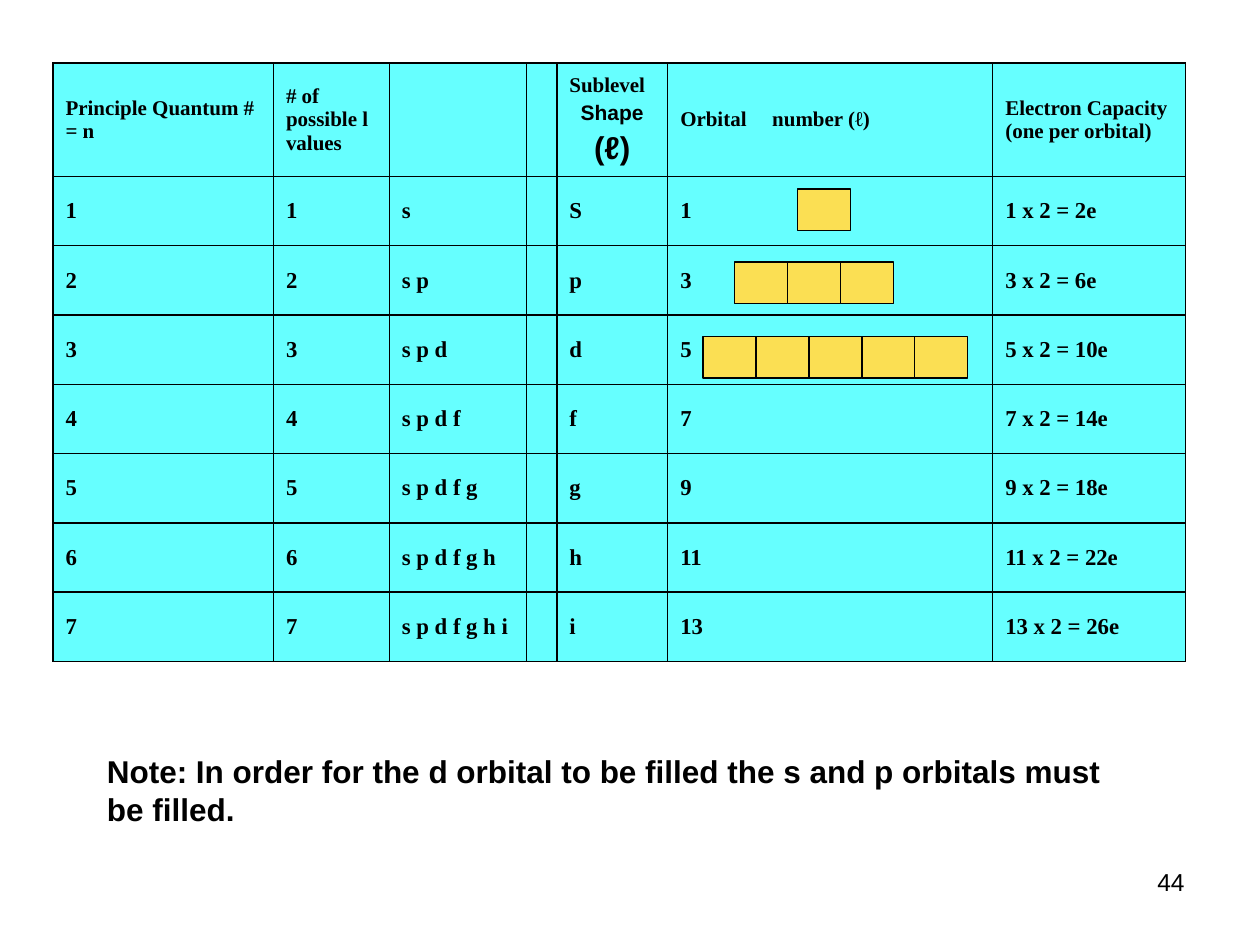
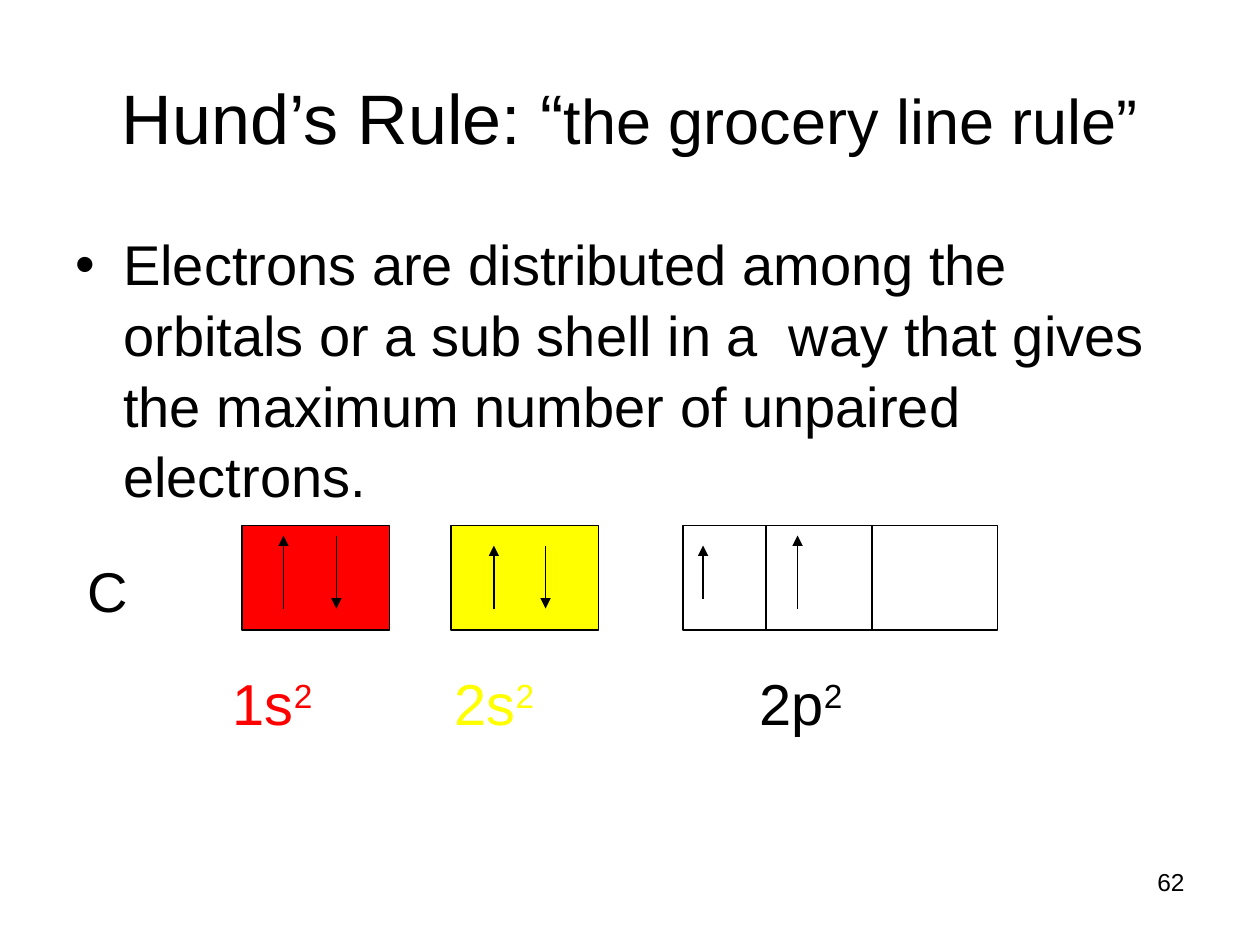
from lxml.etree import Element, SubElement
from pptx import Presentation
from pptx.dml.color import RGBColor
from pptx.enum.shapes import MSO_CONNECTOR, MSO_SHAPE
from pptx.enum.text import MSO_ANCHOR, PP_ALIGN
from pptx.oxml.ns import qn
from pptx.util import Inches, Pt

# Shared look
BLACK = RGBColor(0x00, 0x00, 0x00)
CYAN = RGBColor(0x66, 0xFF, 0xFF)
GOLD = RGBColor(0xFB, 0xDF, 0x53)
RED = RGBColor(0xFF, 0x00, 0x00)
YELLOW = RGBColor(0xFF, 0xFF, 0x00)
SANS, SERIF = "Arial", "Times New Roman"
PAGE_NUMBER = {"name": SANS, "size": Pt(14)}
TITLE = {"name": SANS, "size": Pt(40)}
SUBTITLE = {"name": SANS, "size": Pt(36)}
BODY = {"name": SANS, "size": Pt(32)}
NOTE = {"name": SANS, "size": Pt(18), "bold": True}
LABEL = {"name": SANS, "size": Pt(33)}
HEADER = {"name": SERIF, "size": Pt(12), "bold": True}
SHAPE_HEADER = {"name": SANS, "size": Pt(12), "bold": True}
ENTRY = {"name": SERIF, "size": Pt(13), "bold": True}
THIN = Pt(0.75)

# Quantum number table
COLUMN_WIDTHS = [1.75, 0.92, 1.09, 0.23, 0.88, 2.58, 1.53]
HEADER_HEIGHT, ROW_HEIGHT = 0.9, 0.55
SUBLEVELS = "spdfghi"
HEADERS = [
    [("Principle Quantum #", HEADER), ("= n", HEADER)],
    [("# of possible l values", HEADER)],
    [],
    [],
    [("Sublevel", HEADER), ("Shape", SHAPE_HEADER), ("(ℓ)", NOTE)],
    [("Orbital\tnumber (ℓ)", HEADER)],
    [("Electron Capacity (one per orbital)", HEADER)],
]


def add_run(paragraph, text, style, color=BLACK, superscript=False):
    run = paragraph.add_run()
    run.text = text
    for attribute, value in style.items():
        setattr(run.font, attribute, value)
    run.font.color.rgb = color
    if superscript:
        run._r.get_or_add_rPr().set("baseline", "30000")


def add_text(slide, left, top, width, height, align=PP_ALIGN.LEFT,
             anchor=MSO_ANCHOR.TOP):
    """Add a wrapping text box and return its first paragraph."""
    frame = slide.shapes.add_textbox(
        Inches(left), Inches(top), Inches(width), Inches(height)).text_frame
    frame.word_wrap = True
    frame.vertical_anchor = anchor
    frame.paragraphs[0].alignment = align
    return frame.paragraphs[0]


def add_page_number(slide, number):
    paragraph = add_text(slide, 7.17, 6.83, 2.33, 0.52, PP_ALIGN.RIGHT)
    add_run(paragraph, str(number), PAGE_NUMBER)


def set_tabs(paragraph, *stops):
    tabs = SubElement(paragraph._p.get_or_add_pPr(), qn("a:tabLst"))
    for stop in stops:
        SubElement(tabs, qn("a:tab"), pos=str(Inches(stop)), algn="l")


def set_bullet(paragraph, indent):
    properties = paragraph._p.get_or_add_pPr()
    properties.set("marL", str(Inches(indent)))
    properties.set("indent", str(-Inches(indent)))
    SubElement(properties, qn("a:buFont"), typeface=SANS)
    SubElement(properties, qn("a:buChar"), char="•")


def add_box(slide, left, top, width, height, color=None):
    box = slide.shapes.add_shape(
        MSO_SHAPE.RECTANGLE,
        Inches(left), Inches(top), Inches(width), Inches(height))
    box.shadow.inherit = False
    if color is None:
        box.fill.background()
    else:
        box.fill.solid()
        box.fill.fore_color.rgb = color
    box.line.color.rgb = BLACK
    box.line.width = THIN


def add_line(slide, x, start, end, arrow=False):
    """Draw a vertical line; an arrow points at its end."""
    line = slide.shapes.add_connector(
        MSO_CONNECTOR.STRAIGHT,
        Inches(x), Inches(start), Inches(x), Inches(end))
    line.line.color.rgb = BLACK
    line.line.width = THIN
    if arrow:
        SubElement(line.line._get_or_add_ln(), qn("a:tailEnd"), type="triangle")
    SubElement(line._element.spPr, qn("a:effectLst"))


def format_cell(cell):
    cell.fill.solid()
    cell.fill.fore_color.rgb = CYAN
    cell.vertical_anchor = MSO_ANCHOR.MIDDLE
    properties = cell._tc.get_or_add_tcPr()
    for position, side in enumerate(("lnL", "lnR", "lnT", "lnB")):
        border = Element(qn(f"a:{side}"), w=str(Pt(1)))
        fill = SubElement(border, qn("a:solidFill"))
        SubElement(fill, qn("a:srgbClr"), val=str(BLACK))
        properties.insert(position, border)


def fill_cell(cell, lines):
    format_cell(cell)
    for index, (text, style) in enumerate(lines):
        frame = cell.text_frame
        paragraph = frame.add_paragraph() if index else frame.paragraphs[0]
        add_run(paragraph, text, style)
        if style in (SHAPE_HEADER, NOTE):
            paragraph.alignment = PP_ALIGN.CENTER
            paragraph.space_before = Pt(0.2 * style["size"].pt)


def level_entries(n):
    """Return the table row of energy level n."""
    letter = SUBLEVELS[n - 1]
    orbitals = 2 * n - 1
    texts = [str(n), str(n), " ".join(SUBLEVELS[:n]), "",
             "S" if n == 1 else letter, str(orbitals),
             f"{orbitals} x 2 = {2 * orbitals}e"]
    return [[(text, ENTRY)] if text else [] for text in texts]


def add_quantum_table(slide):
    rows = [HEADERS] + [level_entries(n + 1) for n in range(len(SUBLEVELS))]
    heights = [HEADER_HEIGHT] + [ROW_HEIGHT] * len(SUBLEVELS)
    table = slide.shapes.add_table(
        len(rows), len(COLUMN_WIDTHS), Inches(0.42), Inches(0.5),
        Inches(sum(COLUMN_WIDTHS)), Inches(sum(heights))).table
    table.first_row = table.horz_banding = False
    for column, width in zip(table.columns, COLUMN_WIDTHS):
        column.width = Inches(width)
    for row, height, entries in zip(table.rows, heights, rows):
        row.height = Inches(height)
        for cell, lines in zip(row.cells, entries):
            fill_cell(cell, lines)
    set_tabs(table.cell(0, 5).text_frame.paragraphs[0], 0.73)


def build_quantum_slide(slide):
    add_page_number(slide, 44)
    add_quantum_table(slide)

    # Orbital boxes of the s, p and d sublevels
    for left, top, count in ((6.33, 1.5, 1), (5.83, 2.08, 3), (5.58, 2.67, 5)):
        for index in range(count):
            add_box(slide, left + index * 0.42, top, 0.42, 0.33, GOLD)

    note = add_text(slide, 0.75, 5.92, 8.25, 0.7)
    add_run(note, "Note: In order for the d orbital to be filled the s and p "
            "orbitals must be filled.", NOTE)


def build_hund_slide(slide):
    add_page_number(slide, 62)
    title = add_text(slide, 0.5, 0.3, 9, 1.25, PP_ALIGN.CENTER, MSO_ANCHOR.MIDDLE)
    add_run(title, "Hund’s Rule: “", TITLE)
    add_run(title, "the grocery line rule”", SUBTITLE)

    rule = add_text(slide, 0.5, 1.75, 9, 2.3)
    rule.line_spacing = 1.05
    set_bullet(rule, 0.38)
    add_run(rule, "Electrons are distributed among the orbitals or a sub shell "
            "in a  way that gives the maximum number of unpaired electrons.", BODY)

    # Carbon and its orbitals
    add_run(add_text(slide, 0.6, 4.37, 0.8, 0.65), "C", BODY)
    for left, width, color in ((1.92, 1.17, RED), (3.58, 1.17, YELLOW),
                               (5.42, 2.5, None)):
        add_box(slide, left, 4.17, width, 0.83, color)
    for divider in (6.08, 6.92):
        add_line(slide, divider, 4.17, 5)

    # Electron spins
    for x, start, end in ((2.25, 4.83, 4.25), (2.67, 4.25, 4.83),
                          (3.92, 4.83, 4.33), (4.33, 4.33, 4.83),
                          (5.58, 4.75, 4.33), (6.33, 4.83, 4.25)):
        add_line(slide, x, start, end, arrow=True)

    # Electron configuration
    configuration = add_text(slide, 1.75, 5.25, 6.67, 0.65)
    set_tabs(configuration, 1.76, 4.18)
    for orbital, color in (("1s", RED), ("\t2s", YELLOW), ("\t2p", BLACK)):
        add_run(configuration, orbital, LABEL, color)
        add_run(configuration, "2", LABEL, color, superscript=True)


def main():
    deck = Presentation()
    deck.slide_width, deck.slide_height = Inches(10), Inches(7.5)
    blank = deck.slide_layouts[6]
    for build in (build_quantum_slide, build_hund_slide):
        build(deck.slides.add_slide(blank))
    deck.save("out.pptx")


if __name__ == "__main__":
    main()
